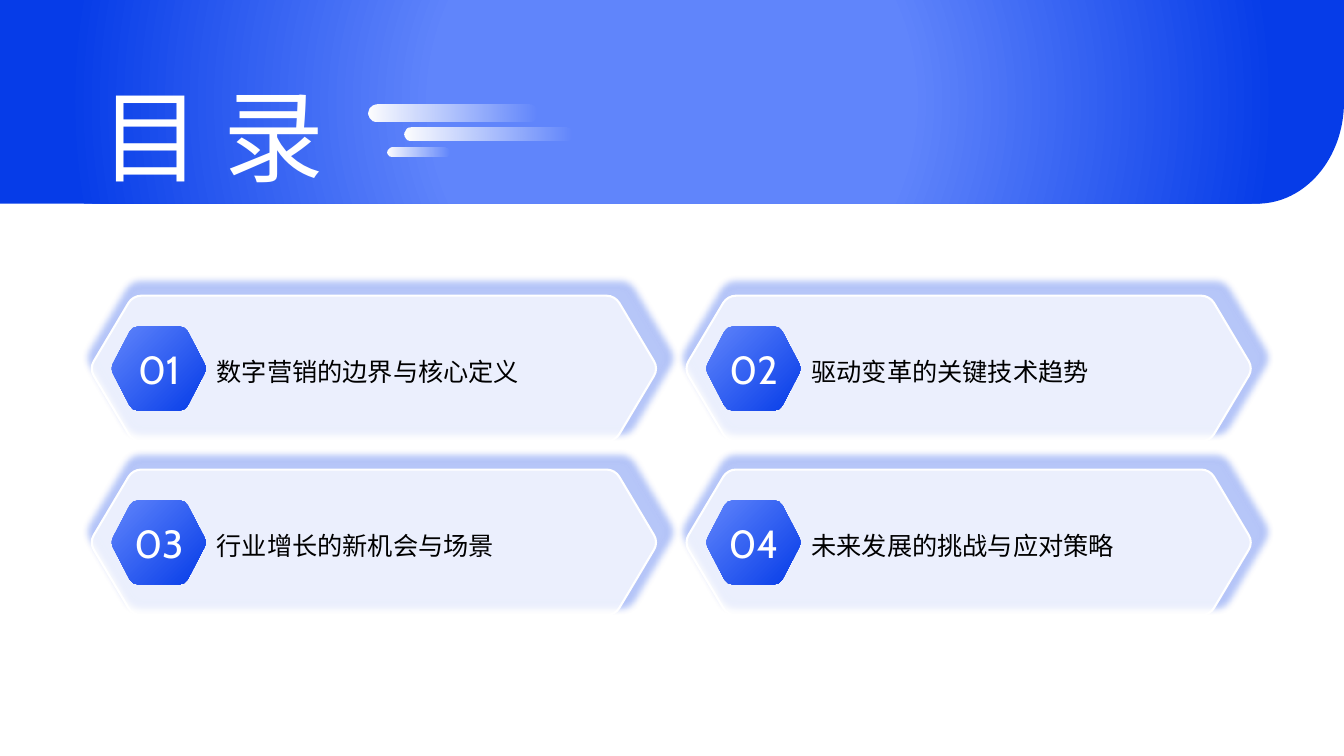
import pptx
import pptx.dml.color
import pptx.enum.shapes
import pptx.enum.text
import pptx.oxml
import pptx.oxml.ns
import pptx.util

Pt = pptx.util.Pt
RGBColor = pptx.dml.color.RGBColor
ANCHOR = pptx.enum.text.MSO_ANCHOR
ALIGN = pptx.enum.text.PP_ALIGN
qn = pptx.oxml.ns.qn

WHITE = RGBColor(0xFF, 0xFF, 0xFF)
BLACK = RGBColor(0x00, 0x00, 0x00)
DEEP_BLUE = RGBColor(0x06, 0x3C, 0xE8)
SOFT_BLUE = RGBColor(0x60, 0x85, 0xFB)
FONT = "Cabin"

PAGE_WIDTH, PAGE_HEIGHT = 960, 540
CHAPTERS = [
    "数字营销的边界与核心定义",
    "驱动变革的关键技术趋势",
    "行业增长的新机会与场景",
    "未来发展的挑战与应对策略",
]
CARD_LEFT, CARD_TOP = 63.9, 211.2
CARD_WIDTH, CARD_HEIGHT = 406.4, 104
COLUMN_STEP, ROW_STEP = 424.8, 124.2
SPEED_BARS = [  # left, top, width, height
    (263.5, 74.9, 120.2, 12.2),
    (288.7, 91.4, 120.2, 9),
    (276.8, 105.1, 44.6, 6.5),
]


def drawing_xml(tag, attributes, content):
    namespace = pptx.oxml.ns.nsdecls("a")
    return pptx.oxml.parse_xml(f"<a:{tag} {namespace} {attributes}>{content}</a:{tag}>")


def add_outline(page, start, steps):
    """Closed outline: a step holds one point for a line, three for a curve."""
    builder = page.shapes.build_freeform(Pt(start[0]), Pt(start[1]), scale=1.0)
    builder.add_line_segments([(Pt(x), Pt(y)) for step in steps for x, y in step])
    shape = builder.convert_to_shape()
    outline = next(shape.element.iter(qn("a:path")))
    segments = iter(outline.findall(qn("a:lnTo")))
    for step in steps:
        parts = [next(segments) for _ in step]
        if len(parts) == 3:
            bend = drawing_xml("cubicBezTo", "", "")
            outline.replace(parts[0], bend)
            for part in parts:
                bend.append(part[0])
            for part in parts[1:]:
                outline.remove(part)
    outline.append(drawing_xml("close", "", ""))
    shape.shadow.inherit = False
    shape.line.fill.background()
    return shape


def add_hexagon(page, left, top, width, height, inset, cut, upright=False):
    """Hexagon with rounded corners; an upright one is turned back on its side."""
    center_x, center_y = left + width / 2, top + height / 2
    half_width, half_height = width / 2, height / 2
    flat = half_width - inset
    corners = [(-flat, -half_height), (flat, -half_height), (half_width, 0),
               (flat, half_height), (-flat, half_height), (-half_width, 0)]
    if upright:
        corners = [(y, x) for x, y in corners]
    corners = [(center_x + x, center_y + y) for x, y in corners]

    def toward(corner, other, distance):
        length = ((other[0] - corner[0]) ** 2 + (other[1] - corner[1]) ** 2) ** 0.5
        return tuple(a + (b - a) * distance / length for a, b in zip(corner, other))

    steps = []
    for index, corner in enumerate(corners):
        before, after = corners[index - 1], corners[(index + 1) % 6]
        steps.append([toward(corner, before, cut)])
        steps.append([toward(corner, before, cut * 0.4),
                      toward(corner, after, cut * 0.4), toward(corner, after, cut)])
    shape = add_outline(page, steps[0][0], steps[1:])
    if upright:
        shape.rotation = 270
    return shape


def fill_gradient(shape, stops, direction):
    """Stops are (position, colour, opacity), in percent."""
    stop_list = "".join(
        f'<a:gs pos="{position * 1000}"><a:srgbClr val="{color}">'
        f'<a:alpha val="{opacity * 1000}"/></a:srgbClr></a:gs>'
        for position, color, opacity in stops)
    gradient = drawing_xml("gradFill", 'rotWithShape="1"',
                           f"<a:gsLst>{stop_list}</a:gsLst>{direction}")
    shape.fill.solid()
    properties = shape.element.spPr
    properties.replace(properties.find(qn("a:solidFill")), gradient)


def circular(left, top, right, bottom):
    return (f'<a:path path="circle"><a:fillToRect l="{left * 1000}" t="{top * 1000}" '
            f'r="{right * 1000}" b="{bottom * 1000}"/></a:path>')


def add_text(page, text, left, top, width, height, size, color, spacing=1.0,
             align=ALIGN.LEFT, anchor=ANCHOR.MIDDLE, margins=(0, 0)):
    box = page.shapes.add_textbox(Pt(left), Pt(top), Pt(width), Pt(height))
    frame = box.text_frame
    frame.word_wrap = True
    frame.vertical_anchor = anchor
    frame.margin_left = frame.margin_right = Pt(margins[0])
    frame.margin_top = frame.margin_bottom = Pt(margins[1])
    para = frame.paragraphs[0]
    para.alignment = align
    para.line_spacing = spacing
    span = para.add_run()
    span.text = text
    span.font.name = FONT
    span.font.size = Pt(size)
    span.font.color.rgb = color


def add_card(page, number, title, left, top):
    # Translucent panel with a soft blue glow
    panel = add_hexagon(page, left, top, CARD_WIDTH, CARD_HEIGHT, 31, 6, upright=True)
    panel.fill.solid()
    panel.fill.fore_color.rgb = WHITE
    properties = panel.element.spPr
    color = properties.find(qn("a:solidFill"))[0]
    color.append(drawing_xml("alpha", 'val="73000"', ""))
    panel.line.color.rgb = WHITE
    panel.line.width = Pt(1.5)
    properties.find(qn("a:effectLst")).append(drawing_xml(
        "outerShdw",
        f'blurRad="{Pt(5)}" sx="103000" sy="103000" algn="ctr" rotWithShape="0"',
        f'<a:srgbClr val="{DEEP_BLUE}"><a:alpha val="40000"/></a:srgbClr>'))

    # Number badge and chapter title
    badge = add_hexagon(page, left + 15, top + 22, 69, 60, 15.6, 4)
    fill_gradient(badge, [(0, DEEP_BLUE, 100), (100, SOFT_BLUE, 100)],
                  circular(100, 100, 0, 0))
    add_text(page, title, left + 90.9, top + 7, 273, 90, 18, BLACK, spacing=1.2)
    add_text(page, f"{number:02d}", left + 25.9, top + 22, 47.5, 60, 28, WHITE,
             align=ALIGN.CENTER)


def add_banner(page):
    rounded_corner = [(960, 112.9), (932.4, 145.5), (897.8, 145.5)]
    banner = add_outline(page, (0, 0), [[(960, 0)], [(960, 72.7)], rounded_corner,
                                        [(0, 145.5)]])
    fill_gradient(banner, [(0, SOFT_BLUE, 100), (35, SOFT_BLUE, 100),
                           (89, DEEP_BLUE, 100)], circular(50, 50, 50, 50))
    add_text(page, "目 录", 64.8, 40.3, 198.7, 94.3, 72, WHITE, spacing=1.1,
             anchor=ANCHOR.TOP, margins=(7.2, 3.6))


def add_speed_bar(page, left, top, width, height):
    bar = page.shapes.add_shape(pptx.enum.shapes.MSO_SHAPE.ROUNDED_RECTANGLE,
                                Pt(left), Pt(top), Pt(width), Pt(height))
    bar.adjustments[0] = 0.5
    bar.shadow.inherit = False
    bar.line.fill.background()
    fill_gradient(bar, [(0, WHITE, 100), (100, WHITE, 0)], '<a:lin ang="0" scaled="0"/>')


def main():
    deck = pptx.Presentation()
    deck.slide_width, deck.slide_height = Pt(PAGE_WIDTH), Pt(PAGE_HEIGHT)
    page = deck.slides.add_slide(deck.slide_layouts[6])

    # White ground
    ground = add_outline(page, (0, 0), [[(PAGE_WIDTH, 0)], [(PAGE_WIDTH, PAGE_HEIGHT)],
                                        [(0, PAGE_HEIGHT)]])
    ground.fill.solid()
    ground.fill.fore_color.rgb = WHITE

    # Chapter cards, two to a row
    for index, title in enumerate(CHAPTERS):
        row, column = divmod(index, 2)
        add_card(page, index + 1, title, CARD_LEFT + column * COLUMN_STEP,
                 CARD_TOP + row * ROW_STEP)

    # Heading with its speed bars
    add_banner(page)
    for bar in SPEED_BARS:
        add_speed_bar(page, *bar)

    deck.save("out.pptx")


if __name__ == "__main__":
    main()
